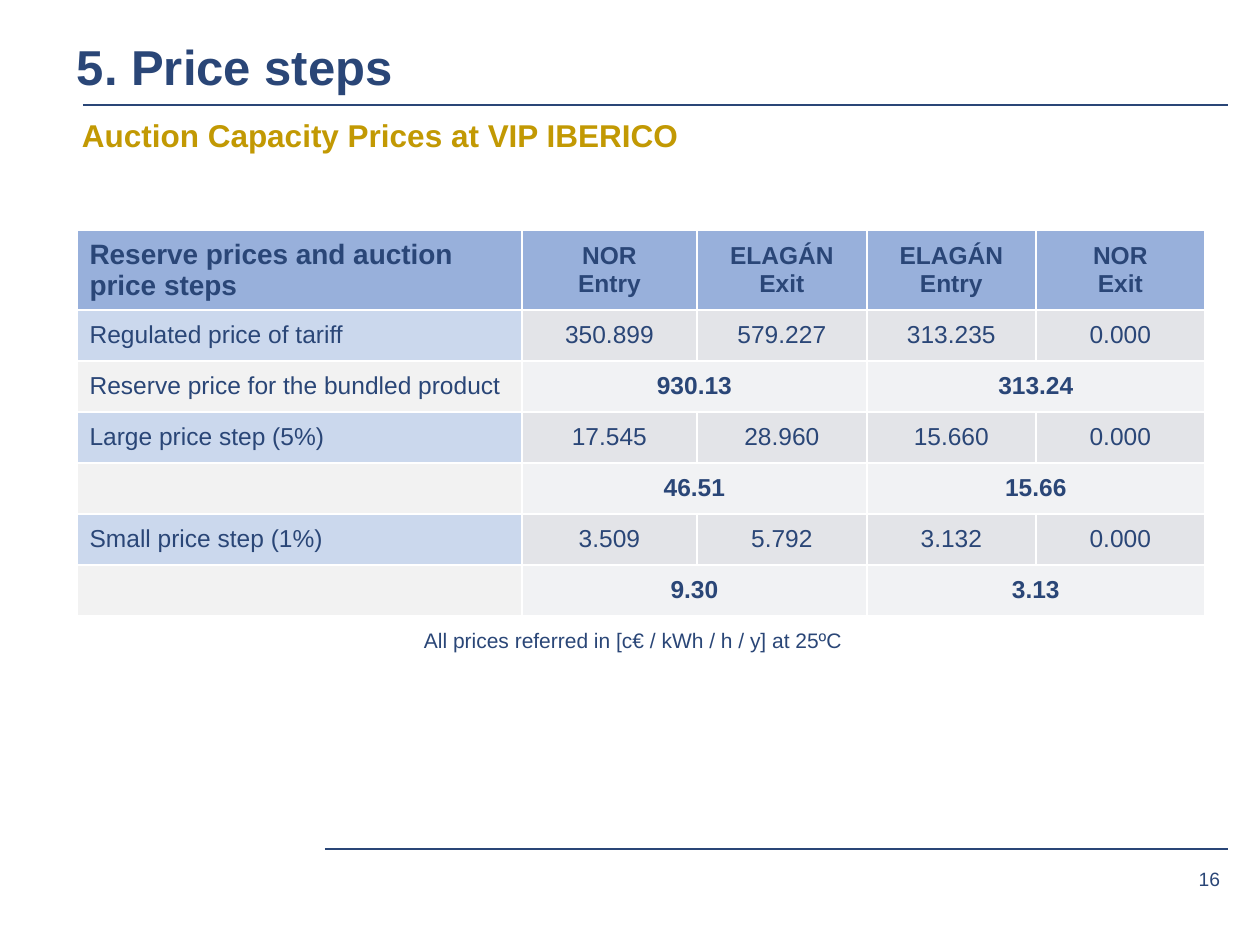
from dataclasses import dataclass

from lxml.etree import SubElement
from pptx import Presentation
from pptx.dml.color import RGBColor
from pptx.enum.shapes import MSO_CONNECTOR as Conn
from pptx.enum.text import MSO_ANCHOR as Anchor, PP_ALIGN as Align
from pptx.oxml import parse_xml
from pptx.oxml.ns import nsdecls, qn
from pptx.util import Emu, Pt

SCALE = 914400 / 126


@dataclass(frozen=True)
class Theme:
    font: str = "Arial"
    navy: str = "2A4677"
    gold: str = "C29903"
    white: str = "FFFFFF"
    head: str = "98B0DB"
    label: str = "CBD8ED"
    value: str = "E3E4E8"
    blank: str = "F2F2F2"
    total: str = "F1F2F4"
    title: int = 28
    sub: int = 18
    lead: int = 16
    body: int = 14
    note: int = 12
    page: int = 11


@dataclass(frozen=True)
class Box:
    left: int
    top: int
    width: int
    height: int


@dataclass(frozen=True)
class Row:
    """A table row; two values mean that each spans a pair of columns."""
    label: str
    values: tuple[str, ...]


T = Theme()
COLS = (445, 175, 170, 169, 169)
HEAD_H, ROW_H = 74, 51
HEADS = ("NOR\nEntry", "ELAGÁN\nExit", "ELAGÁN\nEntry", "NOR\nExit")
ROWS = (
    Row("Regulated price of tariff", ("350.899", "579.227", "313.235", "0.000")),
    Row("Reserve price for the bundled product", ("930.13", "313.24")),
    Row("Large price step (5%)", ("17.545", "28.960", "15.660", "0.000")),
    Row("", ("46.51", "15.66")),
    Row("Small price step (1%)", ("3.509", "5.792", "3.132", "0.000")),
    Row("", ("9.30", "3.13")),
)


def px(n: int) -> Emu:
    return Emu(round(n * SCALE))


def place(shape, box: Box) -> None:
    shape.left, shape.top = px(box.left), px(box.top)
    shape.width, shape.height = px(box.width), px(box.height)


def write(frame, text: str, *, size: int, color: str = T.navy,
          bold: bool = False, align=Align.LEFT) -> None:
    frame.text = text
    for par in frame.paragraphs:
        par.alignment = align
        font = par.font
        font.name, font.size, font.bold = T.font, Pt(size), bold
        font.color.rgb = RGBColor.from_string(color)


def trim(frame, anchor) -> None:
    """Set the anchor, wrap the text and clear the insets."""
    frame.word_wrap = True
    frame.vertical_anchor = anchor
    frame.margin_left = frame.margin_right = 0
    frame.margin_top = frame.margin_bottom = 0


def add_text(slide, box: Box, text: str, anchor=Anchor.TOP, **style) -> None:
    shape = slide.shapes.add_textbox(0, 0, 0, 0)
    place(shape, box)
    trim(shape.text_frame, anchor)
    write(shape.text_frame, text, **style)


def add_rule(slide, left: int, right: int, y: int) -> None:
    rule = slide.shapes.add_connector(Conn.STRAIGHT, px(left), px(y), px(right), px(y))
    rule.line.color.rgb = RGBColor.from_string(T.navy)
    rule.line.width = Pt(1.5)
    SubElement(rule.element.spPr, qn("a:effectLst"))


def paint(cell, fill: str) -> None:
    """Fill a cell and give it thin white borders."""
    cell.vertical_anchor = Anchor.MIDDLE
    cell.fill.solid()
    cell.fill.fore_color.rgb = RGBColor.from_string(fill)
    props = cell._tc.get_or_add_tcPr()
    for i, side in enumerate("LRTB"):
        props.insert(i, parse_xml(
            f'<a:ln{side} {nsdecls("a")} w="{Pt(1)}"><a:solidFill>'
            f'<a:srgbClr val="{T.white}"/></a:solidFill></a:ln{side}>'))


def add_prices(slide, left: int, top: int) -> None:
    count = len(ROWS) + 1
    height = HEAD_H + ROW_H * len(ROWS)
    table = slide.shapes.add_table(count, len(COLS), px(left), px(top),
                                   px(sum(COLS)), px(height)).table
    table.first_row = table.horz_banding = False
    for col, width in zip(table.columns, COLS):
        col.width = px(width)
    for i, row in enumerate(table.rows):
        row.height = px(ROW_H if i else HEAD_H)

    lead = table.cell(0, 0)
    paint(lead, T.head)
    write(lead.text_frame, "Reserve prices and auction price steps", size=T.lead, bold=True)
    for c, head in enumerate(HEADS, 1):
        cell = table.cell(0, c)
        paint(cell, T.head)
        write(cell.text_frame, head, size=T.body, bold=True, align=Align.CENTER)

    for r, row in enumerate(ROWS, 1):
        span = len(HEADS) // len(row.values)
        total = span > 1
        label = table.cell(r, 0)
        paint(label, T.blank if total else T.label)
        write(label.text_frame, row.label, size=T.body)
        for c in range(1, len(COLS)):
            paint(table.cell(r, c), T.total if total else T.value)
        for i, value in enumerate(row.values):
            c = 1 + i * span
            cell = table.cell(r, c)
            if total:
                cell.merge(table.cell(r, c + span - 1))
            write(cell.text_frame, value, size=T.body, bold=total, align=Align.CENTER)


def main() -> None:
    deck = Presentation()
    deck.slide_width, deck.slide_height = px(1260), px(945)
    slide = deck.slides.add_slide(deck.slide_layouts[5])

    title = slide.shapes.title
    place(title, Box(77, 45, 1070, 50))
    trim(title.text_frame, Anchor.BOTTOM)
    write(title.text_frame, "5. Price steps", size=T.title, bold=True)

    add_rule(slide, 83, 1228, 105)
    add_rule(slide, 325, 1228, 849)
    add_text(slide, Box(82, 116, 1148, 40), "Auction Capacity Prices at VIP IBERICO",
             size=T.sub, color=T.gold, bold=True)
    add_prices(slide, 77, 230)
    add_text(slide, Box(424, 628, 605, 30),
             "All prices referred in [c€ / kWh / h / y] at 25ºC", size=T.note)
    add_text(slide, Box(1126, 859, 94, 39), "16", Anchor.MIDDLE,
             size=T.page, align=Align.RIGHT)
    deck.save("out.pptx")


if __name__ == "__main__":
    main()
